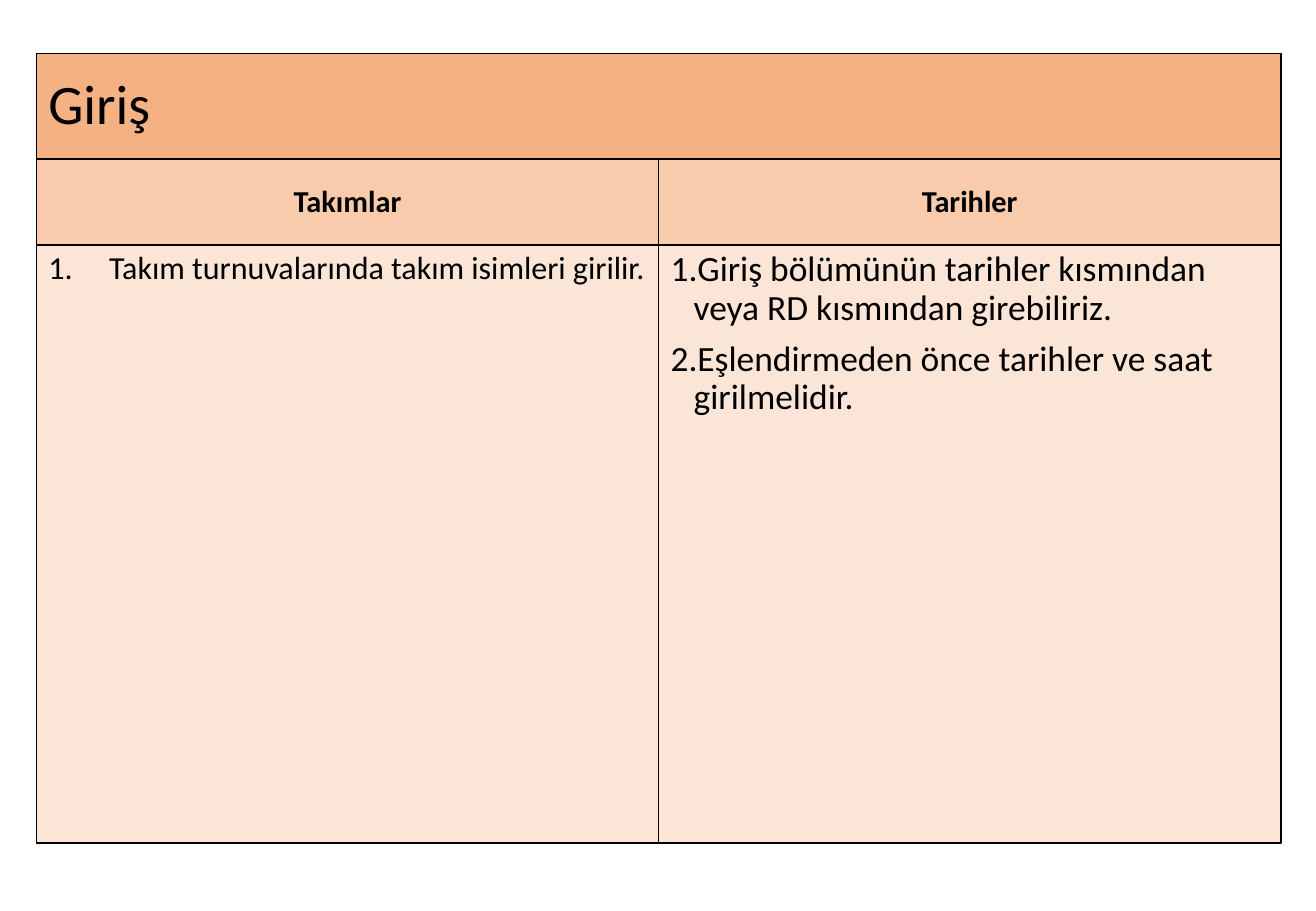
from lxml import etree
from pptx import Presentation
from pptx import util as u
from pptx.dml.color import RGBColor
from pptx.enum import shapes, text
from pptx.oxml.ns import qn

LEFT, COLUMN_WIDTH = 0.3, 5.12
TITLE_TOP, TITLE_HEIGHT = 0.44, 0.87
HEADING_TOP, HEADING_HEIGHT = TITLE_TOP + TITLE_HEIGHT, 0.71
BODY_TOP, BODY_HEIGHT = HEADING_TOP + HEADING_HEIGHT, 4.92

COLUMNS = [
    ("Takımlar", ["Takım turnuvalarında takım isimleri girilir."], 19, 0.5),
    ("Tarihler", ["Giriş bölümünün tarihler kısmından veya RD kısmından girebiliriz.",
                  "Eşlendirmeden önce tarihler ve saat girilmelidir."], 21, 0.19),
]


def colour(value):
    return RGBColor.from_string(value)


def add_panel(page, left, top, width, height, fill):
    panel = page.shapes.add_shape(
        shapes.MSO_SHAPE.RECTANGLE,
        u.Inches(left), u.Inches(top), u.Inches(width), u.Inches(height))
    panel.shadow.inherit = False
    panel.fill.solid()
    panel.fill.fore_color.rgb = colour(fill)
    panel.line.color.rgb = colour("000000")
    panel.line.width = u.Pt(1)
    return panel


def number_paragraph(para, indent):
    """Give the paragraph an automatic number on a hanging indent."""
    properties = para._p.get_or_add_pPr()
    properties.set("marL", str(u.Inches(indent)))
    properties.set("indent", str(-u.Inches(indent)))
    etree.SubElement(properties, qn("a:buFont"), typeface="+mj-lt")
    etree.SubElement(properties, qn("a:buAutoNum"), type="arabicPeriod")


def write(panel, lines, size, bold=False, align=text.PP_ALIGN.LEFT,
          anchor=text.MSO_ANCHOR.MIDDLE, before=7.5, number_indent=None):
    frame = panel.text_frame
    frame.word_wrap = True
    frame.vertical_anchor = anchor
    for index, line in enumerate(lines):
        para = frame.add_paragraph() if index else frame.paragraphs[0]
        para.alignment = align
        para.line_spacing = 0.9
        para.space_before = u.Pt(before)
        if number_indent:
            number_paragraph(para, number_indent)
        span = para.add_run()
        span.text = line
        span.font.name = "Calibri"
        span.font.size = u.Pt(size)
        span.font.bold = bold
        span.font.color.rgb = colour("000000")


def add_column(page, left, heading, items, size, indent):
    heading_panel = add_panel(page, left, HEADING_TOP, COLUMN_WIDTH, HEADING_HEIGHT, "F8CBAD")
    write(heading_panel, [heading], 18, bold=True, align=text.PP_ALIGN.CENTER)
    body_panel = add_panel(page, left, BODY_TOP, COLUMN_WIDTH, BODY_HEIGHT, "FBE5D6")
    write(body_panel, items, size, anchor=text.MSO_ANCHOR.TOP, number_indent=indent)


def main():
    deck = Presentation()
    deck.slide_width, deck.slide_height = u.Inches(10.83), u.Inches(7.5)
    page = deck.slides.add_slide(deck.slide_layouts[6])
    title = add_panel(page, LEFT, TITLE_TOP, len(COLUMNS) * COLUMN_WIDTH, TITLE_HEIGHT, "F4B183")
    write(title, ["Giriş"], 33, before=0)
    for index, column in enumerate(COLUMNS):
        add_column(page, LEFT + index * COLUMN_WIDTH, *column)
    deck.save("out.pptx")


if __name__ == "__main__":
    main()
